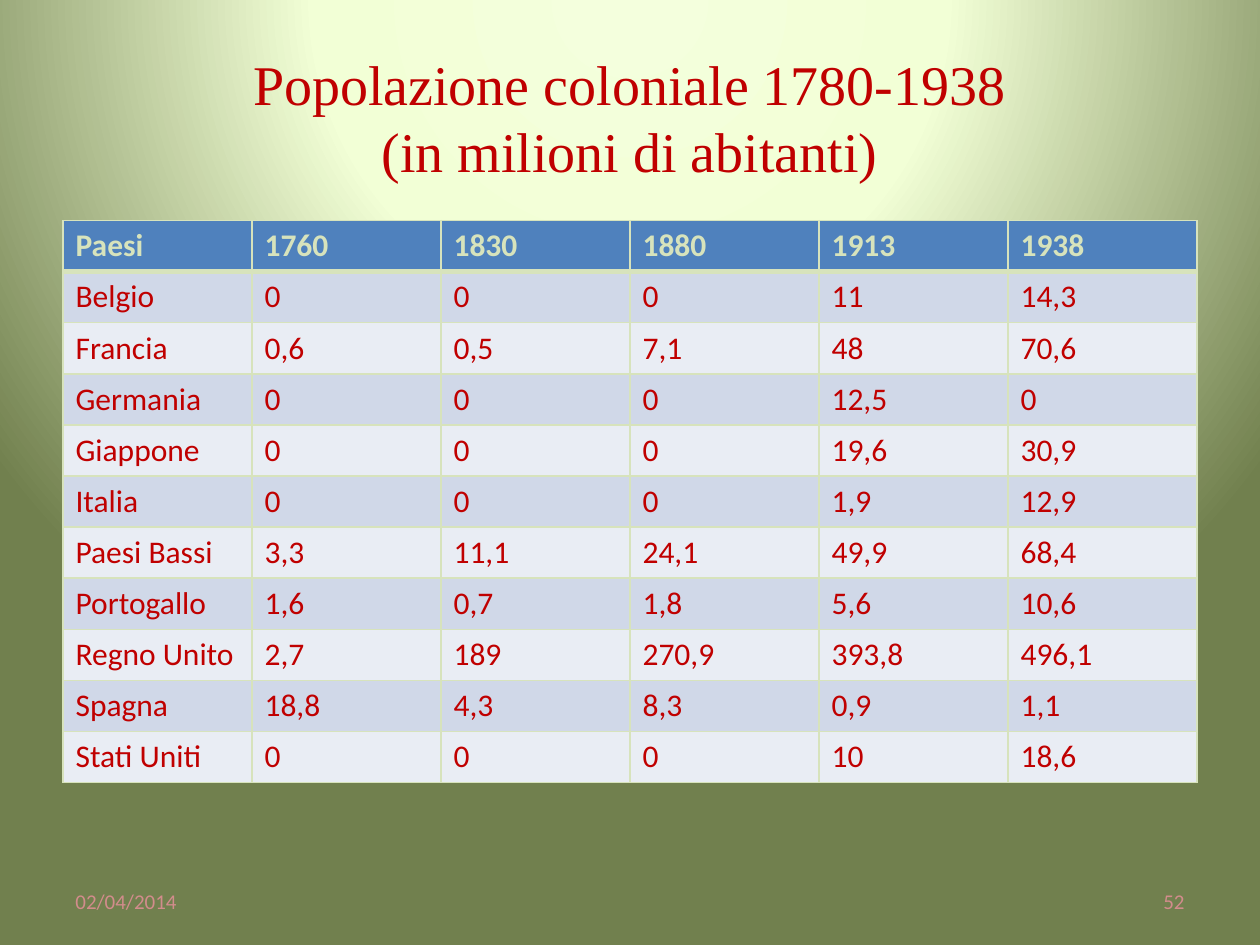
import pptx
import pptx.util
import pptx.oxml
import pptx.oxml.ns
import pptx.dml.color
import pptx.enum.text

Pt = pptx.util.Pt
RGB = pptx.dml.color.RGBColor
ALIGN = pptx.enum.text.PP_ALIGN
MIDDLE = pptx.enum.text.MSO_ANCHOR.MIDDLE

RED = RGB(0xC0, 0x00, 0x00)
PINK = RGB(0xD2, 0x8C, 0x8C)
BLUE = RGB(0x4F, 0x81, 0xBD)
LIME = RGB(0xD7, 0xE3, 0xBC)
BANDS = RGB(0xE9, 0xED, 0xF4), RGB(0xD0, 0xD8, 0xE8)
GLOW = (
    (0, RGB(0xF4, 0xFF, 0xDD)),
    (40, RGB(0xF2, 0xFF, 0xD6)),
    (100, RGB(0x71, 0x80, 0x4E)),
)

TITLE = "Popolazione coloniale 1780-1938\v(in milioni di abitanti)"
ROWS = (
    ("Paesi", "1760", "1830", "1880", "1913", "1938"),
    ("Belgio", "0", "0", "0", "11", "14,3"),
    ("Francia", "0,6", "0,5", "7,1", "48", "70,6"),
    ("Germania", "0", "0", "0", "12,5", "0"),
    ("Giappone", "0", "0", "0", "19,6", "30,9"),
    ("Italia", "0", "0", "0", "1,9", "12,9"),
    ("Paesi Bassi", "3,3", "11,1", "24,1", "49,9", "68,4"),
    ("Portogallo", "1,6", "0,7", "1,8", "5,6", "10,6"),
    ("Regno Unito", "2,7", "189", "270,9", "393,8", "496,1"),
    ("Spagna", "18,8", "4,3", "8,3", "0,9", "1,1"),
    ("Stati Uniti", "0", "0", "0", "10", "18,6"),
)


def set_font(para, name, size, color, bold=False):
    """Set the font of a whole paragraph."""
    font = para.font
    font.name, font.size, font.bold = name, Pt(size), bold
    font.color.rgb = color


def add_glow(slide):
    """Fill the background with a radial gradient centred on the top edge."""
    stops = "".join(
        f'<a:gs pos="{pos * 1000}"><a:srgbClr val="{color}"/></a:gs>'
        for pos, color in GLOW
    )
    slide.element.cSld.insert(0, pptx.oxml.parse_xml(
        f'<p:bg {pptx.oxml.ns.nsdecls("p", "a")}><p:bgPr>'
        f'<a:gradFill rotWithShape="1"><a:gsLst>{stops}</a:gsLst>'
        '<a:path path="circle">'
        '<a:fillToRect l="50000" t="-80000" r="50000" b="180000"/>'
        '</a:path></a:gradFill><a:effectLst/></p:bgPr></p:bg>'
    ))


def add_title(slide, left, top, width, height):
    """Place and format the title placeholder."""
    title = slide.shapes.title
    title.left, title.top = Pt(left), Pt(top)
    title.width, title.height = Pt(width), Pt(height)
    frame = title.text_frame
    frame.text = TITLE
    frame.vertical_anchor = MIDDLE
    para = frame.paragraphs[0]
    para.alignment = ALIGN.CENTER
    set_font(para, "Times New Roman", 32, RED)


def add_edges(cell, **widths):
    """Draw the cell borders, with the given width in points per side."""
    props = cell._tc.get_or_add_tcPr()
    for side in "LRTB":
        props.append(pptx.oxml.parse_xml(
            f'<a:ln{side} {pptx.oxml.ns.nsdecls("a")}'
            f' w="{Pt(widths.get(side, 1))}"><a:solidFill>'
            f'<a:srgbClr val="{LIME}"/></a:solidFill></a:ln{side}>'
        ))


def add_grid(slide, left, top, width, height):
    """Add the population table with a blue header and banded rows."""
    table = slide.shapes.add_table(
        len(ROWS), len(ROWS[0]), Pt(left), Pt(top), Pt(width), Pt(height)
    ).table
    for row, texts in enumerate(ROWS):
        head = row == 0
        edges = {0: {"B": 3}, 1: {"T": 3}}.get(row, {})
        for col, text in enumerate(texts):
            cell = table.cell(row, col)
            add_edges(cell, **edges)
            cell.fill.solid()
            cell.fill.fore_color.rgb = BLUE if head else BANDS[row % 2]
            cell.text = text
            para = cell.text_frame.paragraphs[0]
            set_font(para, "Calibri", 18, LIME if head else RED, head)


def add_note(slide, text, align, left, top, width, height):
    """Add one small footer text."""
    box = slide.shapes.add_textbox(Pt(left), Pt(top), Pt(width), Pt(height))
    frame = box.text_frame
    frame.word_wrap = True
    frame.vertical_anchor = MIDDLE
    frame.text = text
    para = frame.paragraphs[0]
    para.alignment = align
    set_font(para, "Calibri", 12, PINK)


def main():
    """Build the slide and save it."""
    deck = pptx.Presentation()
    deck.slide_width, deck.slide_height = Pt(720), Pt(540)
    slide = deck.slides.add_slide(deck.slide_layouts.get_by_name("Title Only"))
    add_glow(slide)
    add_title(slide, 36, 21.6, 648, 90)
    add_grid(slide, 36, 126, 648, 29.2 * len(ROWS))
    add_note(slide, "02/04/2014", ALIGN.LEFT, 36, 500.5, 168, 28.75)
    add_note(slide, "52", ALIGN.RIGHT, 516, 500.5, 168, 28.75)
    deck.save("out.pptx")


if __name__ == "__main__":
    main()
